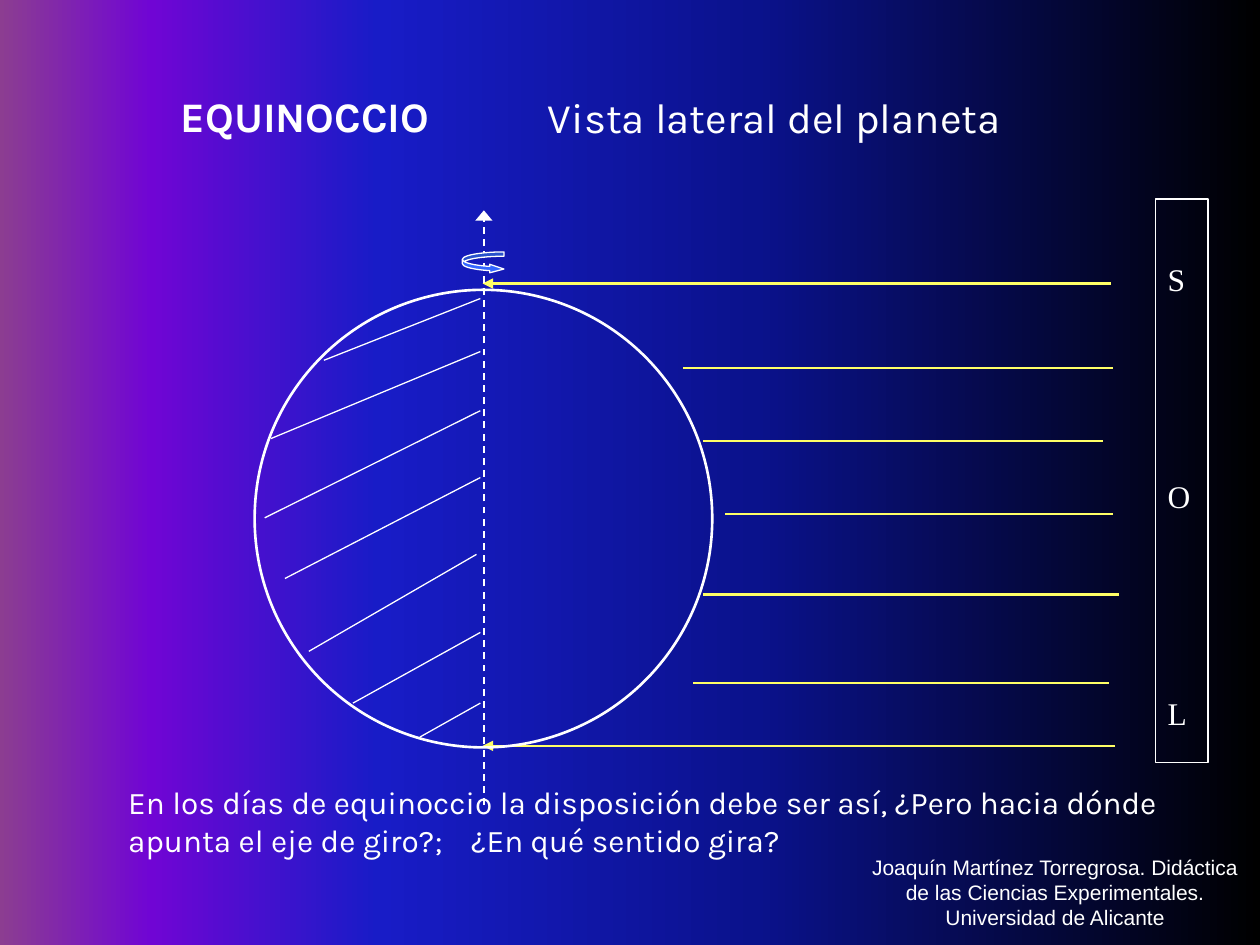
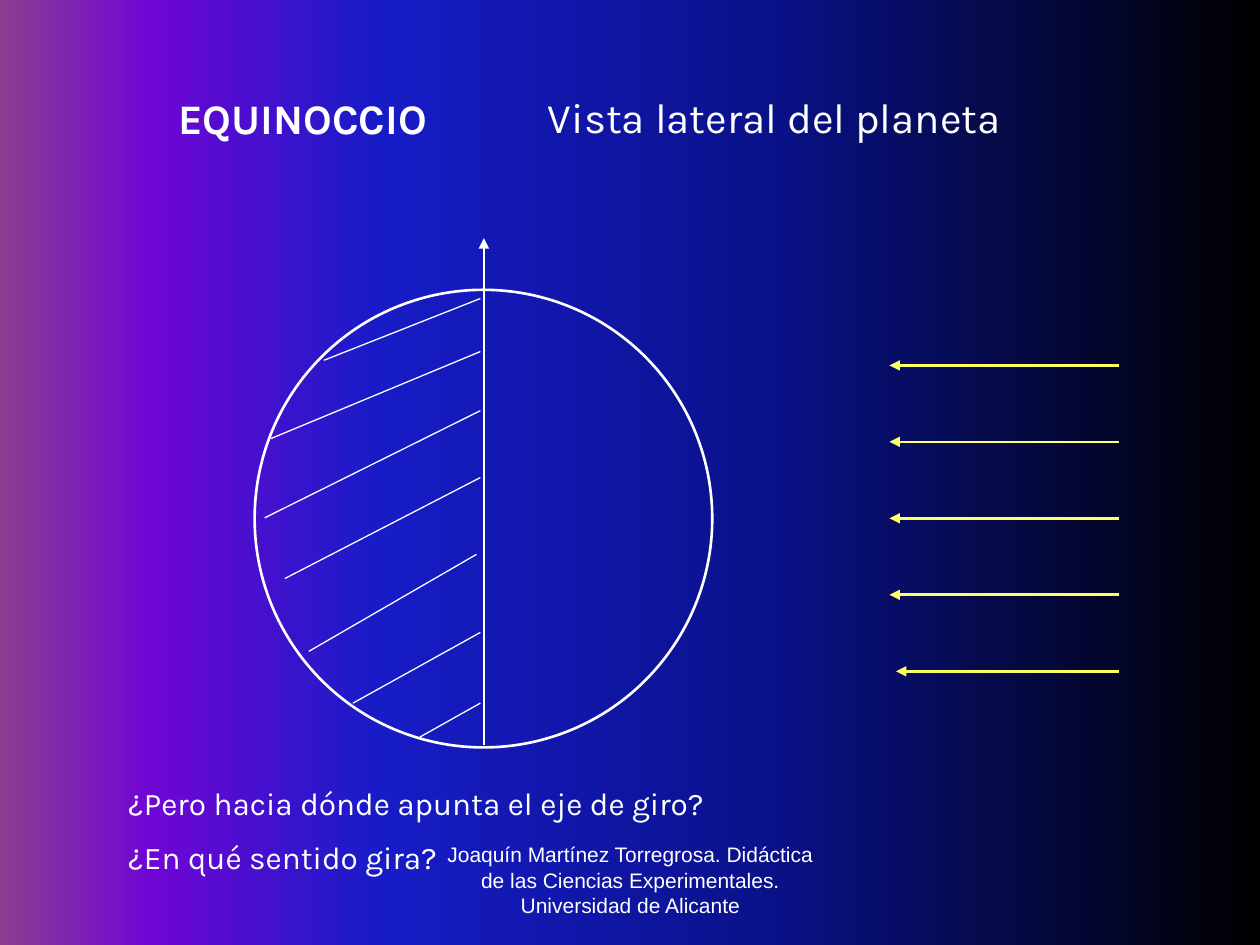
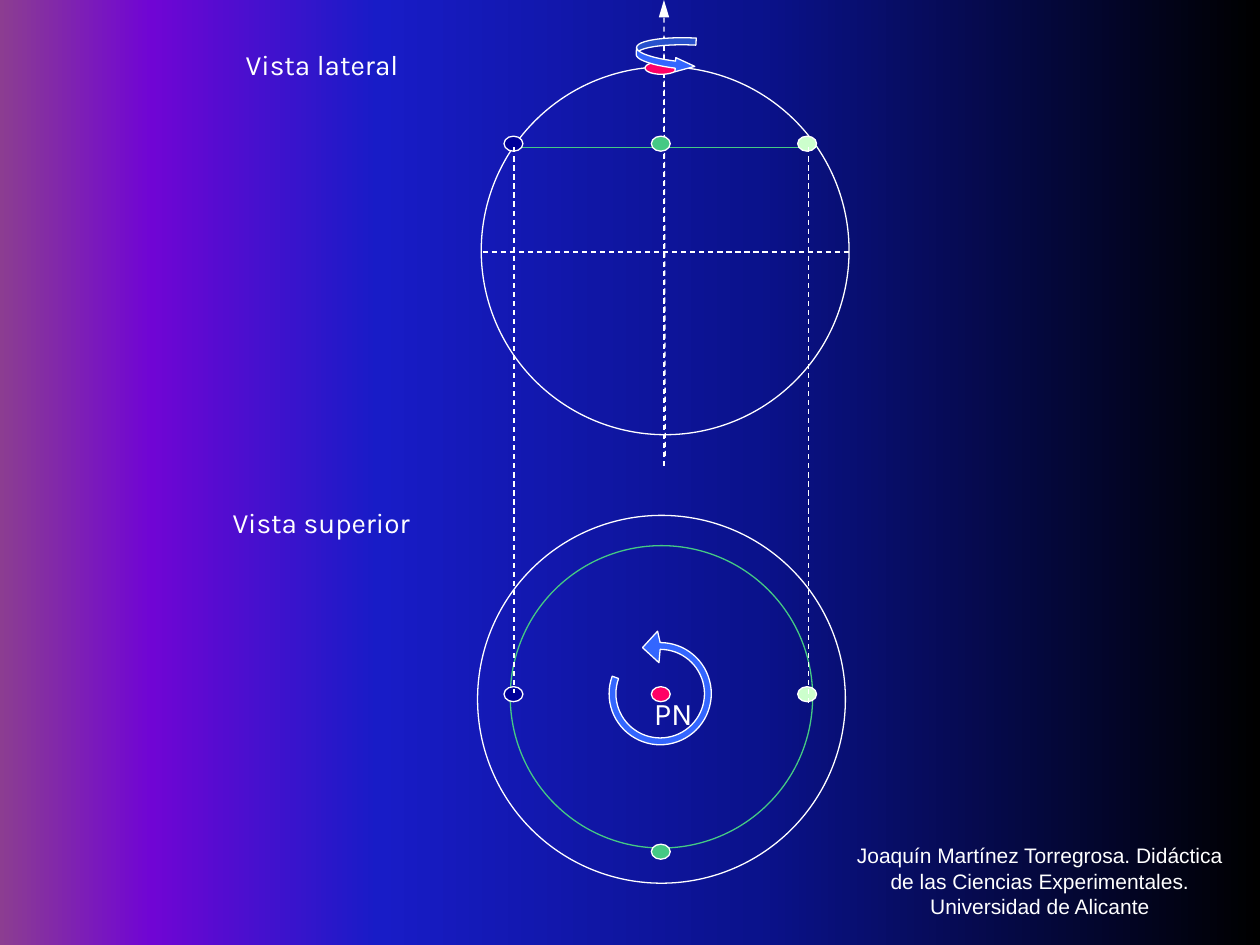
from math import cos, radians, sin

from pptx import Presentation
from pptx.dml.color import RGBColor
from pptx.enum.dml import MSO_LINE
from pptx.enum.shapes import MSO_CONNECTOR, MSO_SHAPE as Kind
from pptx.enum.text import MSO_ANCHOR as Anchor, MSO_AUTO_SIZE, PP_ALIGN as Align
from pptx.oxml.ns import qn
from pptx.oxml.xmlchemy import OxmlElement as Tag
from pptx.util import Pt

WHITE, SUN, BLUE = "FFFFFF", "FFFF66", "3366FF"
NIGHT, DAWN, DAY, POLE = "000099", "45C984", "CCFFCC", "FF0066"
SKY = [(0, "000000"), (40, "0A128C"), (70, "181CC7"), (88, "7005D4"), (100, "8C3D91")]
CREDIT = ("Joaquín Martínez Torregrosa. Didáctica de las Ciencias "
          "Experimentales. Universidad de Alicante")
GLOBE = (145.5, 165.6, 261.5)
AXIS = 131
# Shading strokes: start x, y and end x, y from the globe's corner
SHADE = [(129, 5, 39.6, 40.3), (129, 35.3, 9.4, 85), (129, 69.1, 5.8, 130.3),
         (129, 107.3, 17.3, 165), (126.8, 151.2, 31, 206.6),
         (129, 195.8, 56.2, 236.2), (129, 236.2, 94.4, 255.6)]
# Sun rays: right end, left end, height, whether it has a head
RAYS = [(635, 275.8, 162, True), (635.8, 390.2, 210.2, False),
        (630, 401.8, 252, False), (635.8, 414, 293.8, False),
        (639.4, 401.8, 339.8, False), (633.6, 396, 390.2, False),
        (637.2, 275.8, 426.2, True)]


def rgb(code):
    return RGBColor.from_string(code)


def paint_sky(master):
    """Give the master, and so every slide, the five-stop gradient."""
    fill = master.background.fill
    fill.gradient()
    fill.gradient_angle = 180
    stops = master.element.find(".//" + qn("a:gsLst"))
    for old in list(stops):
        stops.remove(old)
    for place, code in SKY:
        stop, tint = Tag("a:gs"), Tag("a:srgbClr")
        stop.set("pos", str(place * 1000))
        tint.set("val", code)
        stop.append(tint)
        stops.append(stop)


def write(shape, lines, size, font="Karla", bold=False, align=Align.LEFT,
          anchor=Anchor.TOP, inset=(7.2, 3.6), gap=0):
    frame = shape.text_frame
    frame.text = "\n".join(lines)
    frame.word_wrap = True
    frame.auto_size = MSO_AUTO_SIZE.NONE
    frame.vertical_anchor = anchor
    frame.margin_left = frame.margin_right = Pt(inset[0])
    frame.margin_top = frame.margin_bottom = Pt(inset[1])
    for num, para in enumerate(frame.paragraphs):
        para.alignment = align
        para.space_before = Pt(gap if num else 0)
        para.font.name, para.font.size = font, Pt(size)
        para.font.bold = bold
        para.font.color.rgb = rgb(WHITE)
    return frame


def label(slide, box, lines, size, **style):
    shape = slide.shapes.add_textbox(*map(Pt, box))
    return write(shape, lines, size, **style)


def dress(shape, fill, line, width):
    shape.shadow.inherit = False
    if fill:
        shape.fill.solid()
        shape.fill.fore_color.rgb = rgb(fill)
    else:
        shape.fill.background()
    shape.line.color.rgb = rgb(line)
    shape.line.width = Pt(width)
    return shape


def draw(slide, kind, box, fill=None, line=WHITE, width=0.75):
    shape = slide.shapes.add_shape(kind, *map(Pt, box))
    return dress(shape, fill, line, width)


def stroke(slide, ends, color=WHITE, width=0.75, dash=False, head=None):
    """Draw a line; head is (width, length) of an arrowhead at its end."""
    link = slide.shapes.add_connector(MSO_CONNECTOR.STRAIGHT, *map(Pt, ends))
    link.line.color.rgb = rgb(color)
    link.line.width = Pt(width)
    if dash:
        link.line.dash_style = MSO_LINE.DASH
    props = link.element.spPr
    if head:
        tip = Tag("a:tailEnd")
        for key, val in zip(("type", "w", "len"), ("triangle", *head)):
            tip.set(key, val)
        props.find(qn("a:ln")).append(tip)
    props.append(Tag("a:effectLst"))


def ray(slide, right, left, y, tip):
    stroke(slide, (right, y, left, y), SUN, 1.5, head=("med", "med") if tip else None)


def spin(slide, box, bend, turn=0):
    arrow = draw(slide, Kind.CURVED_RIGHT_ARROW, box, BLUE)
    for num, val in enumerate((0.2, 0.4, bend)):
        arrow.adjustments[num] = val
    arrow.rotation = turn


def spot(slide, x, y, color):
    """Place a small marker centred on a point."""
    draw(slide, Kind.OVAL, (x - 5.4, y - 4.3, 10.8, 8.6), color)


def heading(slide, x, y):
    title = slide.shapes.title
    title.left, title.top, title.width, title.height = map(Pt, (x, y, 204.5, 45.4))
    write(title, ["EQUINOCCIO"], 24, bold=True, align=Align.CENTER)
    label(slide, (280.8, 49, 323.3, 51), ["Vista lateral del planeta"], 24,
          align=Align.CENTER)


def credit(slide, x, y):
    label(slide, (x, y, 228.2, 36), [CREDIT], 12, font="Arial",
          align=Align.CENTER, anchor=Anchor.BOTTOM)


def globe(slide, x, y, size, low, high, **axis):
    draw(slide, Kind.OVAL, (x, y, size, size), width=1.5)
    stroke(slide, (x + AXIS, y + low, x + AXIS, y + high), **axis)
    for x1, y1, x2, y2 in SHADE:
        stroke(slide, (x + x1, y + y1, x + x2, y + y2))


def sun(slide, box):
    bar = draw(slide, Kind.RECTANGLE, box)
    frame = write(bar, "SOL", 18, font="Times New Roman", gap=102.2)
    frame.margin_top = Pt(35)


def add_tab(para, place):
    tabs, tab = Tag("a:tabLst"), Tag("a:tab")
    tab.set("pos", str(Pt(place)))
    tab.set("algn", "l")
    tabs.append(tab)
    para._p.pPr.find(qn("a:defRPr")).addprevious(tabs)


def rays_slide(slide):
    heading(slide, 72, 48.2)
    frame = label(slide, (66.2, 444.2, 617.8, 50.4), [
        "En los días de equinoccio la disposición debe ser así, ¿Pero hacia "
        "dónde apunta el eje de giro?;\t¿En qué sentido gira?"], 18)
    add_tab(frame.paragraphs[0], 195.8)
    for beam in RAYS:
        ray(slide, *beam)
    globe(slide, *GLOBE, 294.5, -45.4, width=1, dash=True, head=("lg", "med"))
    spin(slide, (264.2, 144, 23.8, 12.2), 0.667)
    sun(slide, (660.2, 113.8, 30.2, 321.8))
    credit(slide, 488.9, 499)


def ask_slide(slide):
    for num in range(5):
        ray(slide, 639.4, 512 if num == 4 else 508.3, 208.8 + 43.7 * num, True)
    heading(slide, 70.6, 49)
    globe(slide, *GLOBE, 260, -29.5, head=("med", "med"))
    label(slide, (66.2, 444.2, 617.8, 61.2),
          ["¿Pero hacia dónde apunta el eje de giro?", "¿En qué sentido gira?"],
          18, gap=9.5)
    credit(slide, 246.2, 491.8)


def side_view(slide, x, y, size):
    draw(slide, Kind.OVAL, (x, y, size, size))
    mid = x + 104.4
    stroke(slide, (mid, y - 17.3, mid, y + 228.2), dash=True)
    stroke(slide, (x + 0.8, y + 105.8, x + 211, y + 105.8), dash=True)
    stroke(slide, (mid + 0.8, y + 222.4, mid, y - 38.2), dash=True, head=("med", "lg"))
    draw(slide, Kind.OVAL, (x + 93.6, y - 2.9, 18.7, 7.2), POLE)
    spin(slide, (x + 88.6, y - 17.3, 33.8, 20.2), 0.551, 3)
    stroke(slide, (x + 18.8, y + 46, x + 191.6, y + 46), DAWN)
    for dx, color in ((18.4, NIGHT), (186.2, DAY), (102.6, DAWN)):
        spot(slide, x + dx, y + 43.9, color)


def turn(slide, x, y):
    """Draw the open ring with an arrowhead around a centre."""
    def arc(radius, angles):
        return [(radius * cos(radians(a)), radius * sin(radians(a))) for a in angles]

    sweep = range(-90, 201, 5)
    tip = [(-1.5, -35.7), (-10.1, -26.3), (-0.7, -17.7)]
    edge = arc(25.3, sweep) + arc(29.2, reversed(sweep)) + tip
    dots = [(Pt(x + dx), Pt(y + dy)) for dx, dy in edge]
    path = slide.shapes.build_freeform(*dots[0])
    path.add_line_segments(dots[1:], close=True)
    dress(path.convert_to_shape(), BLUE, WHITE, 0.75)


def top_view(slide, x, y, size):
    draw(slide, Kind.OVAL, (x, y, size, size))
    draw(slide, Kind.OVAL, (x + 18.7, y + 17.3, 172.8, 172.8), line=DAWN)
    turn(slide, x + 104.4, y + 101.9)
    spot(slide, x + 104.7, y + 102.2, POLE)
    label(slide, (x + 99.3, y + 101.5, 30.2, 23), ["PN"], 18, inset=(1.4, 0.7))
    for dx, dy, color in ((188.3, 102.2, DAY), (104.7, 192.2, DAWN), (20.5, 102.2, NIGHT)):
        spot(slide, x + dx, y + dy, color)


def views_slide(slide):
    for box, name in (((102.2, 282.2, 162.7, 35.3), "Vista superior"),
                      ((110.2, 20.9, 147.6, 35.3), "Vista lateral")):
        label(slide, box, [name], 16, align=Align.CENTER, inset=(13, 6.5))
    side_view(slide, 275, 38.2, 210.2)
    top_view(slide, 272.9, 294.5, 210.2)
    for x, low in ((293.8, 396), (462.2, 401.8)):
        stroke(slide, (x, 84.2, x, low), dash=True)
    credit(slide, 480.2, 492.5)


def main():
    deck = Presentation()
    deck.slide_width, deck.slide_height = Pt(720), Pt(540)
    paint_sky(deck.slide_master)
    titled, blank = deck.slide_layouts[5], deck.slide_layouts[6]
    for build, layout in ((rays_slide, titled), (ask_slide, titled), (views_slide, blank)):
        build(deck.slides.add_slide(layout))
    deck.save("out.pptx")


if __name__ == "__main__":
    main()
